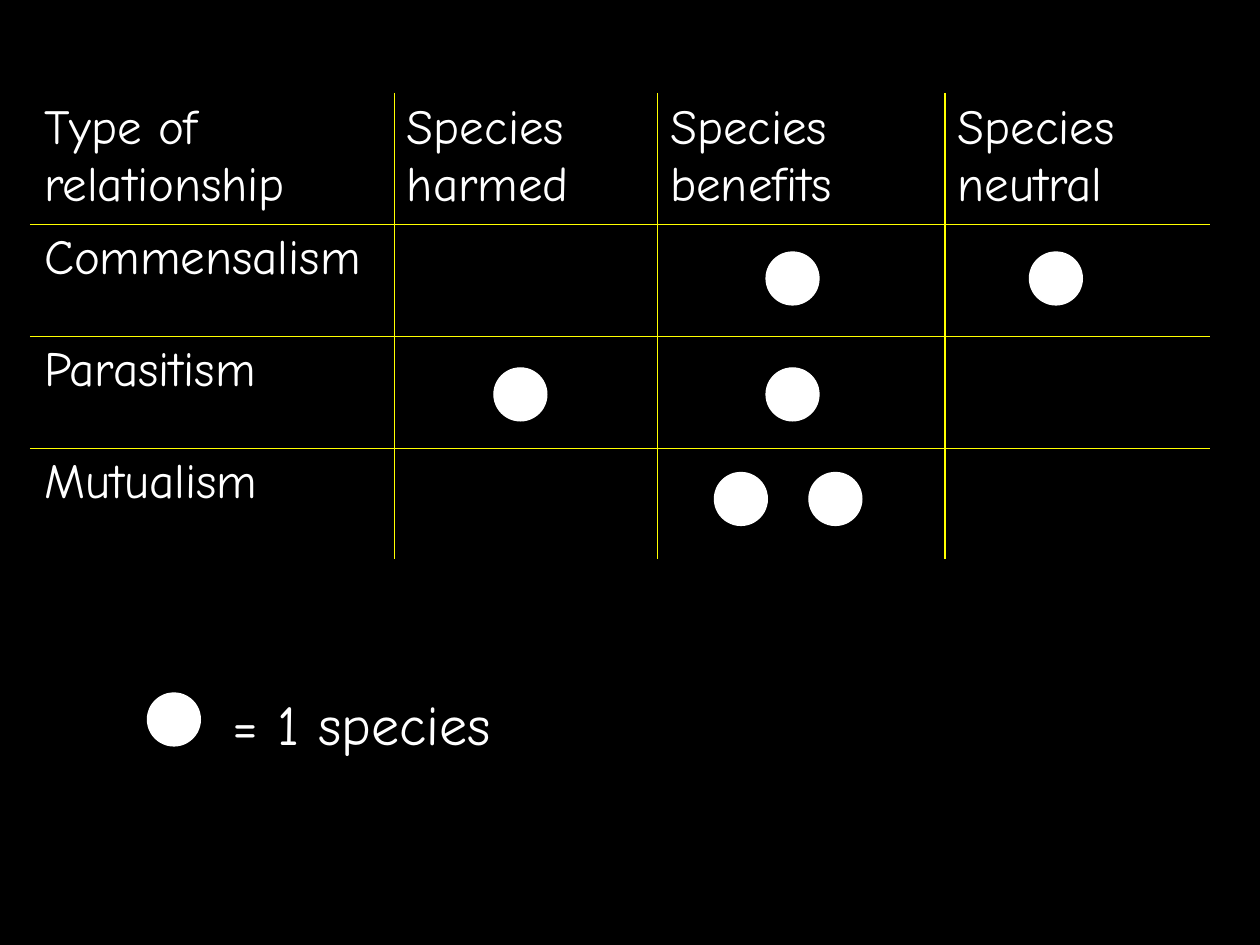
from lxml.etree import SubElement
from pptx import Presentation
from pptx.dml.color import RGBColor
from pptx.enum.shapes import MSO_SHAPE
from pptx.enum.text import MSO_AUTO_SIZE
from pptx.oxml.ns import qn
from pptx.util import Inches, Pt

COLORS = {"back": "000000", "text": "FFFFFF", "rule": "FFFF00"}
FONT = "Comic Neue"
ROWS = [
    ["Type of relationship", "Species harmed", "Species benefits", "Species neutral"],
    ["Commensalism", "", "", ""],
    ["Parasitism", "", "", ""],
    ["Mutualism", "", "", ""],
]
WIDTHS = [2.88, 2.09, 2.28, 2.09]
HEIGHTS = [1.03, 0.89, 0.89, 0.89]
LEFT, TOP = 0.25, 0.75
DOT = 0.42
# Dots by row: top, then the left edge of each
DOTS = [
    (2, [6.08, 8.17]),
    (2.92, [3.92, 6.08]),
    (3.75, [5.67, 6.42]),
    (5.5, [1.17]),
]
KEY = "= 1 species"


def color(name):
    return RGBColor.from_string(COLORS[name])


def write(frame, text, size, before):
    """Set the text, with space before it as a percentage of the line."""
    para = frame.paragraphs[0]
    para.text = text
    para.font.size = Pt(size)
    para.font.name = FONT
    para.font.color.rgb = color("text")
    props = para._p.get_or_add_pPr()
    space = props.makeelement(qn("a:spcBef"), {})
    props.insert(0, space)
    SubElement(space, qn("a:spcPct"), val=str(before * 1000))


def border(cell, row, col):
    """Yellow rules inside the table, black ones round its edge."""
    props = cell._tc.get_or_add_tcPr()
    edges = {
        "L": col == 0,
        "R": col == len(WIDTHS) - 1,
        "T": row == 0,
        "B": row == len(HEIGHTS) - 1,
    }
    for spot, (side, outer) in enumerate(edges.items()):
        width = Pt(2.25 if outer else 1)
        line = props.makeelement(qn(f"a:ln{side}"), {"w": str(width)})
        props.insert(spot, line)
        fill = SubElement(line, qn("a:solidFill"))
        SubElement(fill, qn("a:srgbClr"), val=COLORS["back" if outer else "rule"])


def add_grid(slide):
    frame = slide.shapes.add_table(
        len(HEIGHTS), len(WIDTHS), Inches(LEFT), Inches(TOP),
        Inches(sum(WIDTHS)), Inches(sum(HEIGHTS)))
    table = frame.table
    table.first_row = table.horz_banding = False
    for col, width in zip(table.columns, WIDTHS):
        col.width = Inches(width)
    for row, height in zip(table.rows, HEIGHTS):
        row.height = Inches(height)
    for r, texts in enumerate(ROWS):
        for c, text in enumerate(texts):
            cell = table.cell(r, c)
            cell.fill.background()
            border(cell, r, c)
            if text:
                write(cell.text_frame, text, 28, 20)


def add_dot(slide, left, top):
    dot = slide.shapes.add_shape(
        MSO_SHAPE.OVAL, Inches(left), Inches(top), Inches(DOT), Inches(DOT))
    dot.shadow.inherit = False
    dot.fill.solid()
    dot.fill.fore_color.rgb = color("text")
    dot.line.color.rgb = color("text")
    dot.line.width = Pt(0.75)


def main():
    deck = Presentation()
    deck.slide_width, deck.slide_height = Inches(10), Inches(7.5)
    slide = deck.slides.add_slide(deck.slide_layouts[6])
    slide.background.fill.solid()
    slide.background.fill.fore_color.rgb = color("back")
    add_grid(slide)
    for top, lefts in DOTS:
        for left in lefts:
            add_dot(slide, left, top)
    box = slide.shapes.add_textbox(
        Inches(1.75), Inches(5.42), Inches(3.5), Inches(0.63))
    box.text_frame.word_wrap = True
    box.text_frame.auto_size = MSO_AUTO_SIZE.SHAPE_TO_FIT_TEXT
    write(box.text_frame, KEY, 32, 50)
    deck.save("out.pptx")


if __name__ == "__main__":
    main()
